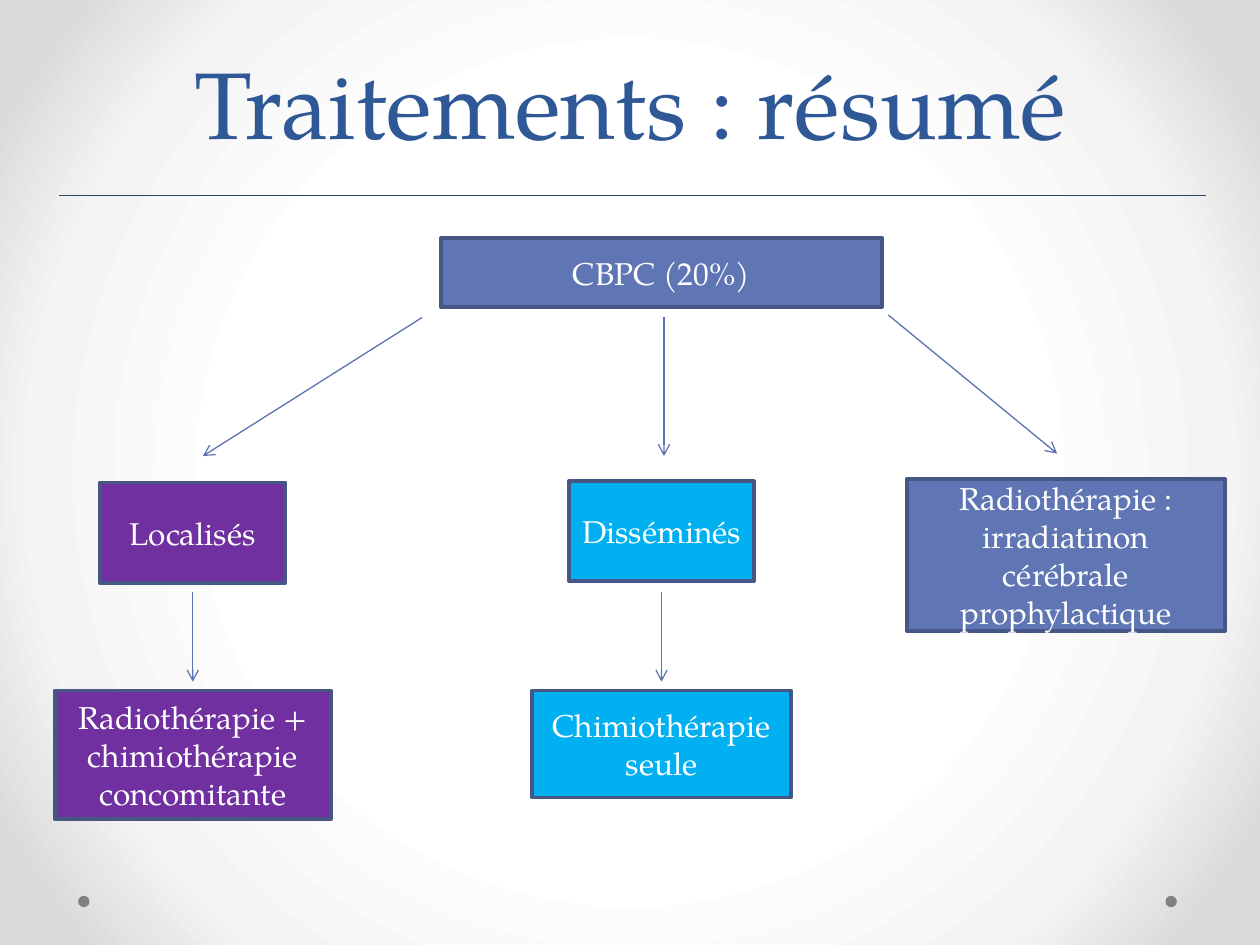
from pptx import Presentation
from pptx.dml.color import RGBColor
from pptx.enum.shapes import MSO_CONNECTOR, MSO_SHAPE
from pptx.enum.text import MSO_ANCHOR, PP_ALIGN
from pptx.oxml import parse_xml
from pptx.oxml.ns import nsdecls
from pptx.oxml.xmlchemy import OxmlElement
from pptx.util import Inches, Pt

FONT = "TeX Gyre Pagella"
WHITE = RGBColor(0xFF, 0xFF, 0xFF)
TITLE_BLUE = RGBColor(0x2F, 0x58, 0x97)
RULE_BLUE = RGBColor(0x2C, 0x42, 0x6C)
ARROW_BLUE = RGBColor(0x5C, 0x72, 0xB2)
BORDER_BLUE = RGBColor(0x47, 0x57, 0x85)
SLATE = RGBColor(0x60, 0x76, 0xB4)
PURPLE = RGBColor(0x70, 0x30, 0xA0)
CYAN = RGBColor(0x00, 0xB0, 0xF0)
GREY = RGBColor(0x80, 0x80, 0x80)
BACKDROP = [(50, WHITE), (76, RGBColor(0xF4, 0xF4, 0xF4)), (92, RGBColor(0xDA, 0xDA, 0xDA))]

deck = Presentation()
deck.slide_width, deck.slide_height = Inches(10), Inches(7.5)
COL = deck.slide_width / 100
ROW = deck.slide_height / 75
slide = deck.slides.add_slide(deck.slide_layouts[6])


def write(holder, text, size=18, color=WHITE, anchor=MSO_ANCHOR.MIDDLE, spacing=None):
    frame = holder.text_frame
    frame.word_wrap = True
    frame.vertical_anchor = anchor
    paragraph = frame.paragraphs[0]
    paragraph.alignment = PP_ALIGN.CENTER
    paragraph.line_spacing = spacing
    run = paragraph.add_run()
    run.text = text
    run.font.name = FONT
    run.font.size = Pt(size)
    run.font.color.rgb = color


def draw_line(x1, y1, x2, y2, color=ARROW_BLUE, weight=0.75, arrow=True):
    line = slide.shapes.add_connector(
        MSO_CONNECTOR.STRAIGHT, int(x1 * COL), int(y1 * ROW), int(x2 * COL), int(y2 * ROW))
    line.line.color.rgb = color
    line.line.width = Pt(weight)
    if arrow:
        tip = OxmlElement("a:tailEnd")
        tip.set("type", "arrow")
        line.line._get_or_add_ln().append(tip)
    line._element.spPr.append(OxmlElement("a:effectLst"))


slide.background.fill.solid()
stops = "".join(
    f'<a:gs pos="{share * 1000}"><a:srgbClr val="{color}"/></a:gs>' for share, color in BACKDROP)
glow = parse_xml(
    f'<a:gradFill {nsdecls("a")} rotWithShape="1"><a:gsLst>{stops}</a:gsLst><a:path path="circle">'
    '<a:fillToRect l="50000" t="50000" r="50000" b="50000"/></a:path></a:gradFill>')
plain = slide._element.xpath(".//p:bgPr/a:solidFill")[0]
plain.getparent().replace(plain, glow)

for dot_left in (92.5, 6.2):
    dot = slide.shapes.add_shape(
        MSO_SHAPE.OVAL, int(dot_left * COL), int(71.1 * ROW), int(0.9 * COL), int(0.9 * ROW))
    dot.shadow.inherit = False
    dot.fill.solid()
    dot.fill.fore_color.rgb = GREY
    dot.line.fill.background()

draw_line(4.7, 15.5, 95.7, 15.5, color=RULE_BLUE, weight=0.25, arrow=False)

title = slide.shapes.add_textbox(int(5 * COL), 0, int(90 * COL), int(13.1 * ROW))
write(title, "Traitements : résumé", size=54, color=TITLE_BLUE,
      anchor=MSO_ANCHOR.BOTTOM, spacing=Pt(58))

LOCAL, SPREAD, BRAIN = 15.3, 52.5, 84.6
boxes = [
    ("CBPC (20%)", SPREAD, 18.9, 35, 5.5, SLATE),
    ("Localisés", LOCAL, 38.3, 14.7, 8, PURPLE),
    ("Disséminés", SPREAD, 38.2, 14.7, 7.9, CYAN),
    ("Radiothérapie : irradiatinon cérébrale prophylactique", BRAIN, 38, 25.2, 12.1, SLATE),
    ("Chimiothérapie seule", SPREAD, 54.8, 20.5, 8.5, CYAN),
    ("Radiothérapie + chimiothérapie concomitante", LOCAL, 54.8, 21.9, 10.2, PURPLE),
]
for label, center, top, width, height, color in boxes:
    box = slide.shapes.add_shape(
        MSO_SHAPE.RECTANGLE, int((center - width / 2) * COL), int(top * ROW),
        int(width * COL), int(height * ROW))
    box.shadow.inherit = False
    box.fill.solid()
    box.fill.fore_color.rgb = color
    box.line.color.rgb = BORDER_BLUE
    box.line.width = Pt(2.25)
    write(box, label)

for start, end in ((33.5, 16.1), (52.7, 52.7)):
    draw_line(start, 25.2, end, 36.2)
draw_line(70.5, 25, 83.9, 36)
for center in (LOCAL, SPREAD):
    draw_line(center, 47, center, 54.1)

deck.save("out.pptx")
